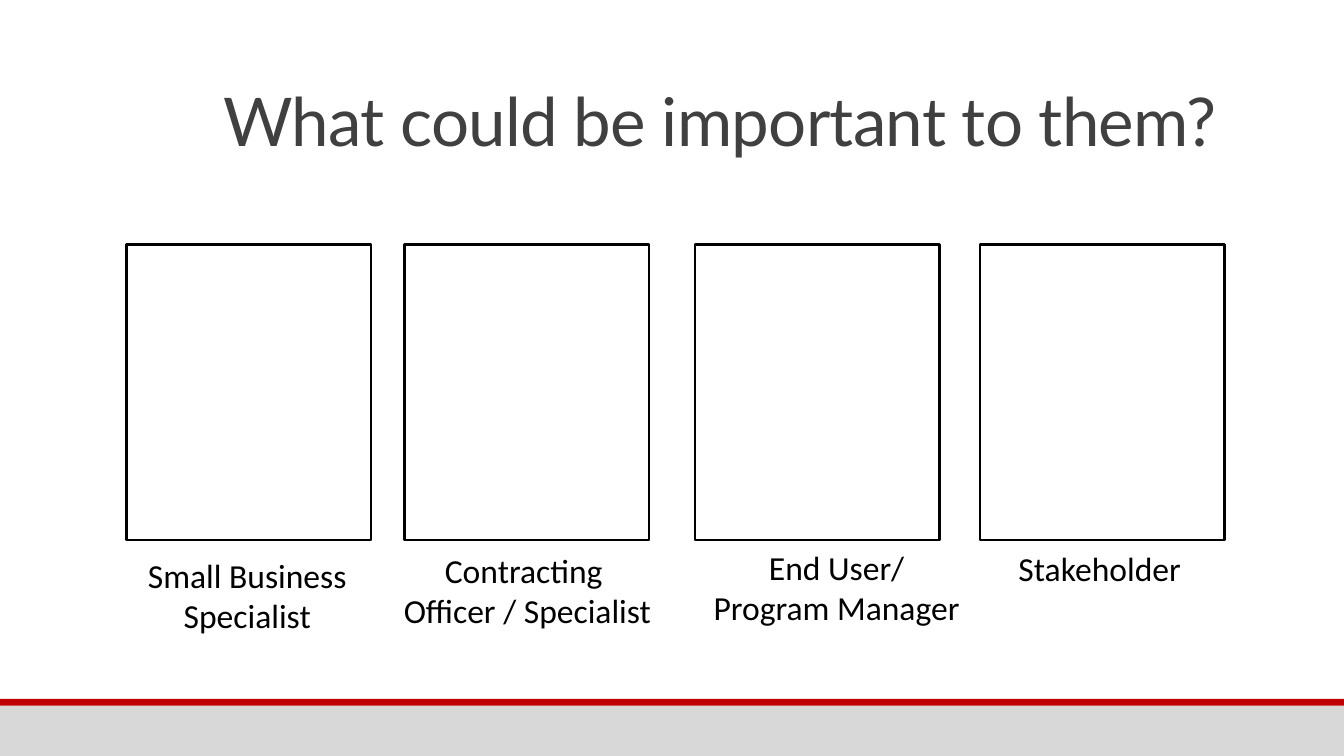
from dataclasses import dataclass

from pptx import Presentation
from pptx.dml.color import RGBColor
from pptx.enum.shapes import MSO_SHAPE
from pptx.enum.text import MSO_ANCHOR, MSO_AUTO_SIZE, PP_ALIGN
from pptx.slide import Slide
from pptx.util import Inches, Pt

RECT = MSO_SHAPE.RECTANGLE
LEFT, CENTER = PP_ALIGN.LEFT, PP_ALIGN.CENTER
TOP = MSO_ANCHOR.TOP
NO_FIT, GROW = MSO_AUTO_SIZE.NONE, MSO_AUTO_SIZE.SHAPE_TO_FIT_TEXT
TITLE_ONLY = 5

SLIDE_W = 10
SLIDE_H = SLIDE_W * 9 / 16
FRAME_TOP, FRAME_W, FRAME_H = 1.82, 1.82, 2.2
FOOTER_TOP, STRIPE_H = 5.25, 0.05


@dataclass(frozen=True)
class Theme:
    title_font: str = "Lato"
    label_font: str = "Calibri"
    title_size: Pt = Pt(36)
    label_size: Pt = Pt(18)
    frame_line: Pt = Pt(1.25)
    title: RGBColor = RGBColor(0x40, 0x40, 0x40)
    ink: RGBColor = RGBColor(0, 0, 0)
    footer: RGBColor = RGBColor(0xD8, 0xD8, 0xD8)
    stripe: RGBColor = RGBColor(0xC0, 0, 0)


@dataclass(frozen=True)
class Role:
    lines: tuple[str, ...]
    frame_left: float
    left: float
    top: float
    width: float
    height: float = 0.71
    align: PP_ALIGN = CENTER


THEME = Theme()
ROLES = (
    Role(("Small Business Specialist",), 0.94, 0.93, 4.08, 1.82),
    Role(("Contracting ", "Officer / Specialist"), 3.01, 2.87, 4.04, 2.11),
    Role(("End User/", "Program Manager"), 5.17, 5, 4.02, 2.45),
    Role(("Stakeholder",), 7.29, 7.48, 4.03, 1.66, 0.4, LEFT),
)


def add_bar(s: Slide, top: float, height: float, color: RGBColor) -> None:
    sp = s.shapes.add_shape(RECT, 0, Inches(top), Inches(SLIDE_W), Inches(height))
    sp.shadow.inherit = False
    sp.fill.solid()
    sp.fill.fore_color.rgb = color
    sp.line.fill.background()


def add_title(s: Slide, text: str) -> None:
    sp = s.shapes.title
    sp.left, sp.top = Inches(1.56), Inches(0.63)
    sp.width, sp.height = Inches(8.25), Inches(1.19)
    tf = sp.text_frame
    tf.word_wrap, tf.auto_size, tf.vertical_anchor = True, NO_FIT, TOP
    p = tf.paragraphs[0]
    p.alignment, p.line_spacing = LEFT, 0.85
    r = p.add_run()
    r.text = text
    r.font.name, r.font.size = THEME.title_font, THEME.title_size
    r.font.color.rgb = THEME.title
    r._r.get_or_add_rPr().set("spc", "-40")


def add_frame(s: Slide, left: float) -> None:
    sp = s.shapes.add_shape(
        RECT, Inches(left), Inches(FRAME_TOP), Inches(FRAME_W), Inches(FRAME_H)
    )
    sp.shadow.inherit = False
    sp.fill.background()
    sp.line.color.rgb = THEME.ink
    sp.line.width = THEME.frame_line


def add_label(s: Slide, role: Role) -> None:
    sp = s.shapes.add_textbox(
        Inches(role.left), Inches(role.top), Inches(role.width), Inches(role.height)
    )
    tf = sp.text_frame
    tf.word_wrap, tf.auto_size = True, GROW
    p = tf.paragraphs[0]
    p.alignment = role.align
    for i, line in enumerate(role.lines):
        if i:
            p.add_line_break()
        r = p.add_run()
        r.text = line
        r.font.name, r.font.size = THEME.label_font, THEME.label_size
        r.font.color.rgb = THEME.ink


def main() -> None:
    prs = Presentation()
    prs.slide_width, prs.slide_height = Inches(SLIDE_W), Inches(SLIDE_H)
    s = prs.slides.add_slide(prs.slide_layouts[TITLE_ONLY])
    add_bar(s, FOOTER_TOP, SLIDE_H - FOOTER_TOP, THEME.footer)
    add_bar(s, FOOTER_TOP - STRIPE_H, STRIPE_H, THEME.stripe)
    add_title(s, "What could be important to them?")
    for role in ROLES:
        add_frame(s, role.frame_left)
        add_label(s, role)
    prs.save("out.pptx")


if __name__ == "__main__":
    main()
